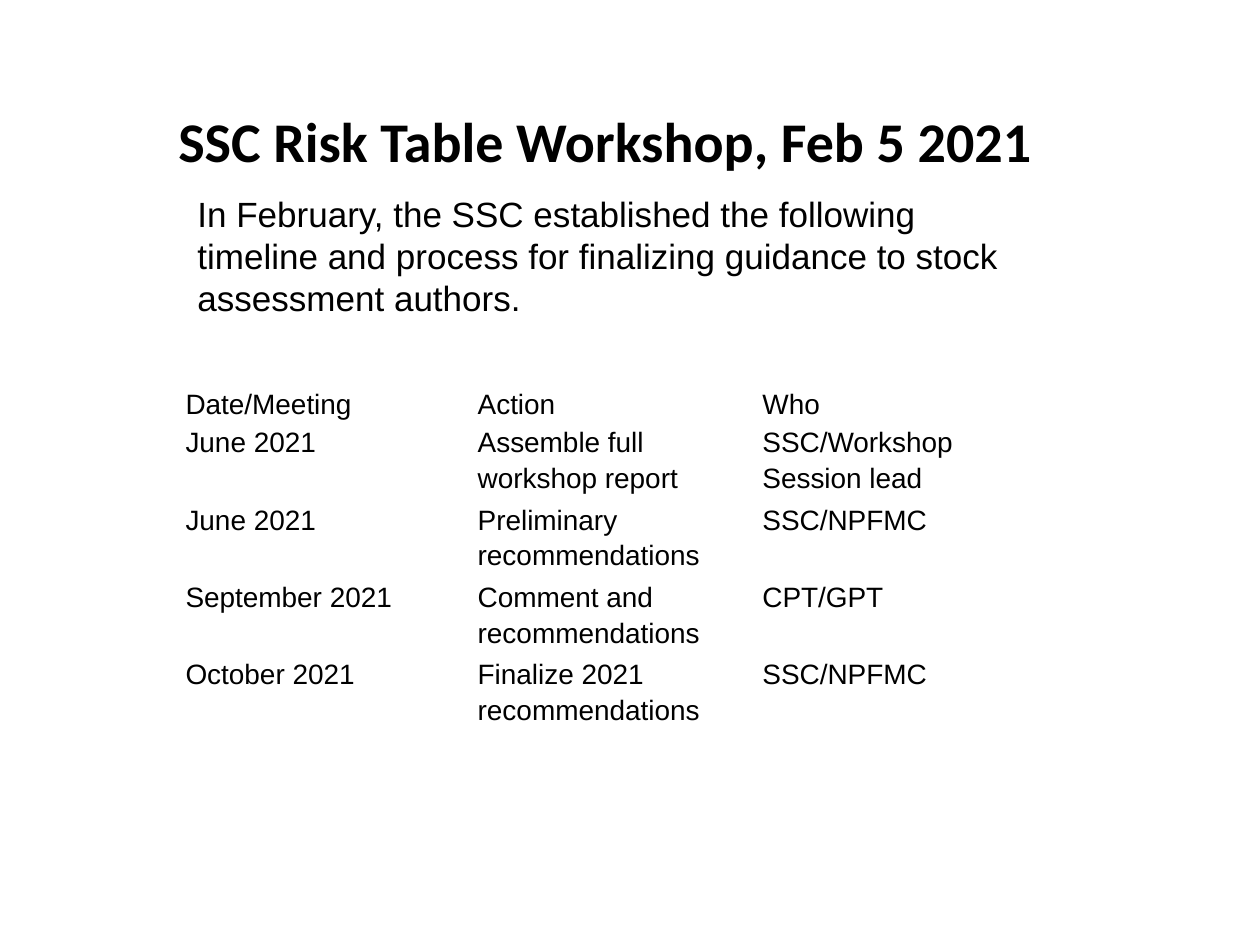
import pptx
import pptx.dml.color
import pptx.enum.text
import pptx.util

Cm = pptx.util.Cm
Pt = pptx.util.Pt
ANCHOR = pptx.enum.text.MSO_ANCHOR
ALIGN = pptx.enum.text.PP_ALIGN

COLORS = {"text": "000000"}
COLUMN_WIDTHS = [5.89, 5.74, 5.74]
HEADER_HEIGHT = 0.71
ROW_HEIGHT = 1.5
TIMELINE = [
    ("Date/Meeting", "Action", "Who"),
    ("June 2021", "Assemble full workshop report", "SSC/Workshop Session lead"),
    ("June 2021", "Preliminary recommendations", "SSC/NPFMC"),
    ("September 2021", "Comment and recommendations", "CPT/GPT"),
    ("October 2021", "Finalize 2021 recommendations", "SSC/NPFMC"),
]


def write_text(tf, text, size, font="Arial", bold=False, align=ALIGN.LEFT, spacing=None):
    tf.word_wrap = True
    p = tf.paragraphs[0]
    p.alignment = align
    p.line_spacing = spacing
    r = p.add_run()
    r.text = text
    r.font.name = font
    r.font.size = Pt(size)
    r.font.bold = bold
    r.font.color.rgb = pptx.dml.color.RGBColor.from_string(COLORS["text"])


def add_text_region(slide, box, text, anchor, **text_format):
    sp = slide.shapes.add_textbox(*map(Cm, box))
    sp.text_frame.vertical_anchor = anchor
    write_text(sp.text_frame, text, **text_format)


def add_timeline(slide, left, top):
    """Place the unruled schedule table with its corner at left, top."""
    height = HEADER_HEIGHT + ROW_HEIGHT * (len(TIMELINE) - 1)
    table = slide.shapes.add_table(
        len(TIMELINE), len(COLUMN_WIDTHS),
        Cm(left), Cm(top), Cm(sum(COLUMN_WIDTHS)), Cm(height)).table
    table.first_row = False
    table.horz_banding = False
    for column, width in zip(table.columns, COLUMN_WIDTHS):
        column.width = Cm(width)
    for i, (row, texts) in enumerate(zip(table.rows, TIMELINE)):
        row.height = Cm(ROW_HEIGHT if i else HEADER_HEIGHT)
        for cell, text in zip(row.cells, texts):
            cell.fill.background()
            cell.margin_left = cell.margin_right = Cm(0.18)
            cell.margin_top = cell.margin_bottom = 0
            write_text(cell.text_frame, text, size=16, spacing=1.15)


def main():
    prs = pptx.Presentation()
    prs.slide_width, prs.slide_height = Cm(25.4), Cm(19.05)
    slide = prs.slides.add_slide(prs.slide_layouts[6])
    add_text_region(slide, (1.37, 1.6, 21.67, 2.46),
                    "SSC Risk Table Workshop, Feb 5 2021", ANCHOR.MIDDLE,
                    size=32, font="Calibri", bold=True, align=ALIGN.CENTER)
    add_timeline(slide, 3.56, 7.75)
    add_text_region(slide, (3.73, 3.76, 16.71, 3.58),
                    "In February, the SSC established the following timeline and "
                    "process for finalizing guidance to stock assessment authors.",
                    ANCHOR.TOP, size=20)
    prs.save("out.pptx")


if __name__ == "__main__":
    main()
